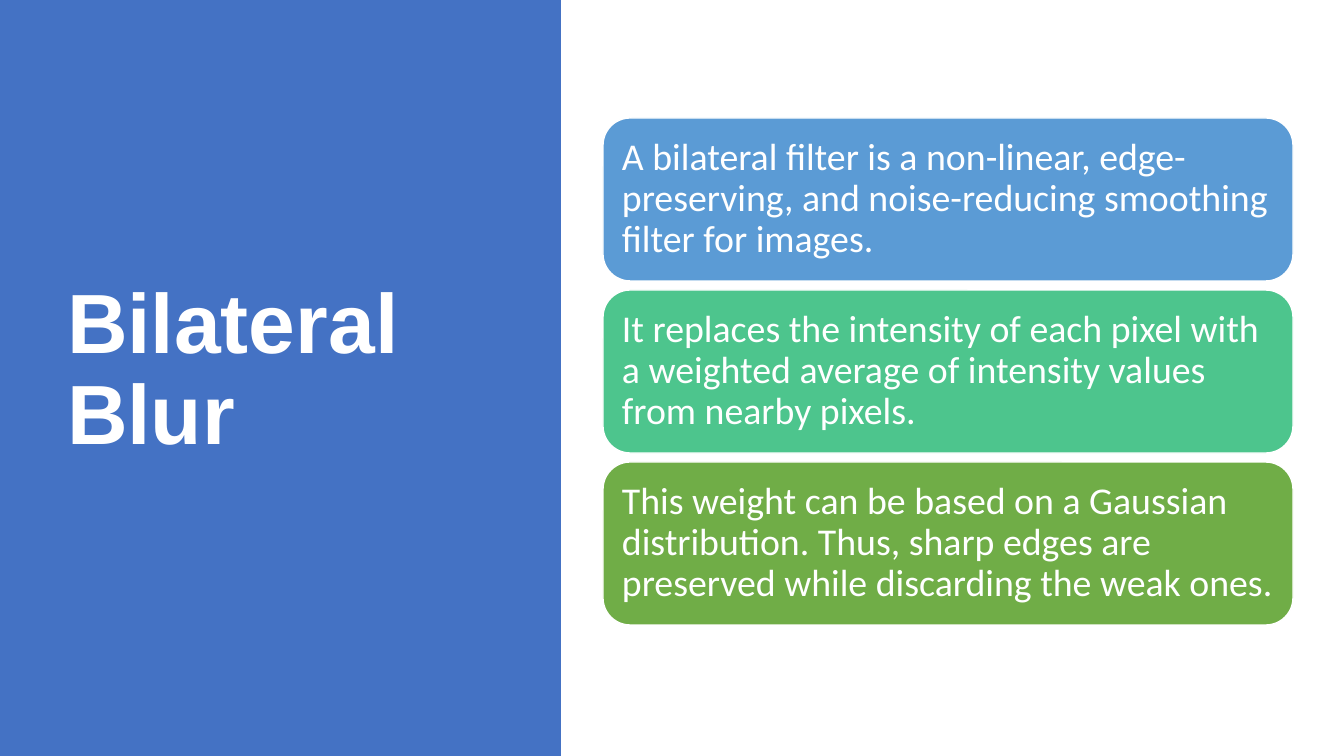
from dataclasses import dataclass

from pptx import Presentation
from pptx.dml.color import RGBColor
from pptx.enum.shapes import MSO_SHAPE
from pptx.enum.text import MSO_ANCHOR, MSO_AUTO_SIZE, PP_ALIGN
from pptx.shapes.autoshape import Shape
from pptx.slide import Slide
from pptx.text.text import TextFrame
from pptx.util import Emu, Pt

PX_PER_INCH = 100.8
COLORS = {
    "white": "FFFFFF",
    "panel": "4472C4",
    "blue": "5B9BD5",
    "teal": "4DC58D",
    "green": "70AD47",
}
CARD_TOP = 118
CARD_STEP = 172
CARD_PAD = 11


@dataclass
class Box:
    left: int
    top: int
    width: int
    height: int


@dataclass
class Card:
    text: str
    color: str


CARDS = [
    Card("A bilateral filter is a non-linear, edge-preserving, and "
         "noise-reducing smoothing filter for images.", "blue"),
    Card("It replaces the intensity of each pixel with a weighted average "
         "of intensity values from nearby pixels.", "teal"),
    Card("This weight can be based on a Gaussian distribution. Thus, sharp "
         "edges are preserved while discarding the weak ones.", "green"),
]


def px(count: int) -> Emu:
    return Emu(round(count * 914400 / PX_PER_INCH))


def rgb(name: str) -> RGBColor:
    return RGBColor.from_string(COLORS[name])


def add_block(slide: Slide, kind: MSO_SHAPE, box: Box, color: str) -> Shape:
    """Add a flat filled shape with no outline."""
    shape = slide.shapes.add_shape(
        kind, px(box.left), px(box.top), px(box.width), px(box.height))
    shape.shadow.inherit = False
    shape.fill.solid()
    shape.fill.fore_color.rgb = rgb(color)
    shape.line.fill.background()
    return shape


def write(frame: TextFrame, text: str, font: str, size: int,
          bold: bool = False) -> None:
    """Fill a frame with one white, left-aligned, centred-in-height paragraph."""
    frame.text = text
    frame.word_wrap = True
    frame.auto_size = MSO_AUTO_SIZE.NONE
    frame.vertical_anchor = MSO_ANCHOR.MIDDLE
    para = frame.paragraphs[0]
    para.alignment = PP_ALIGN.LEFT
    para.line_spacing = 0.9
    para.font.name = font
    para.font.size = Pt(size)
    para.font.bold = bold
    para.font.color.rgb = rgb("white")


def add_title(slide: Slide, box: Box, text: str) -> None:
    title = slide.shapes.title
    title.left, title.top = px(box.left), px(box.top)
    title.width, title.height = px(box.width), px(box.height)
    write(title.text_frame, text, "Arial", 60, bold=True)


def add_card(slide: Slide, card: Card, top: int) -> None:
    shape = add_block(slide, MSO_SHAPE.ROUNDED_RECTANGLE,
                      Box(603, top, 690, 163), card.color)
    shape.line.color.rgb = rgb("white")
    shape.line.width = Pt(1)
    frame = shape.text_frame
    frame.margin_left = frame.margin_right = px(CARD_PAD)
    frame.margin_top = frame.margin_bottom = px(CARD_PAD)
    write(frame, card.text, "Calibri", 27)


def main() -> None:
    deck = Presentation()
    deck.slide_width, deck.slide_height = px(1344), px(756)
    slide = deck.slides.add_slide(deck.slide_layouts.get_by_name("Title Only"))

    panel = add_block(slide, MSO_SHAPE.RECTANGLE, Box(0, 0, 561, 756), "panel")
    slide.shapes.title.element.addprevious(panel.element)
    add_title(slide, Box(57, 68, 419, 607), "Bilateral Blur")

    for row, card in enumerate(CARDS):
        add_card(slide, card, CARD_TOP + row * CARD_STEP)

    deck.save("out.pptx")


if __name__ == "__main__":
    main()
